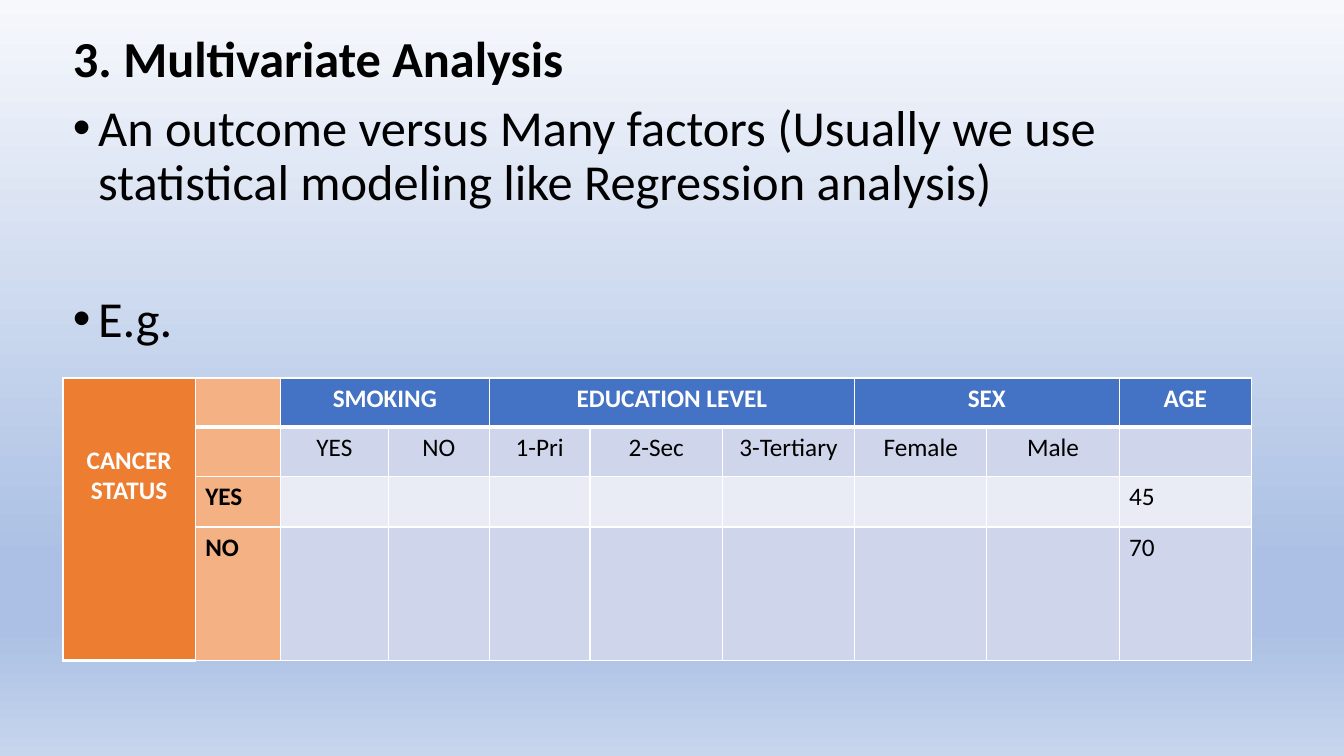
from lxml.etree import SubElement
from pptx import Presentation
from pptx.dml.color import RGBColor
from pptx.enum.text import PP_ALIGN
from pptx.oxml.ns import qn
from pptx.util import Emu, Pt

PX = 9525
COLORS = {
    "black": "000000", "white": "FFFFFF", "orange": "ED7D31", "peach": "F4B183",
    "blue": "4472C4", "band": "CFD5EA", "light": "E9EBF5",
}
BACKGROUND = [(0, "F6F8FC"), (74, "ABC0E4"), (83, "ABC0E4"), (100, "C7D5ED")]
COLUMNS = [126, 81, 103, 96, 96] + [126] * 5
HEIGHTS = [47, 47, 48, 127]
CELLS = [
    ["CANCER STATUS", "", "SMOKING", "", "EDUCATION LEVEL", "", "", "SEX", "", "AGE"],
    ["", "", "YES", "NO", "1-Pri", "2-Sec", "3-Tertiary", "Female", "Male", ""],
    ["", "YES", "", "", "", "", "", "", "", "45"],
    ["", "NO", "", "", "", "", "", "", "", "70"],
]
MERGES = [(0, 0, 3, 0), (0, 2, 0, 3), (0, 4, 0, 6), (0, 7, 0, 8)]
ROW_FILLS = ["blue", "band", "light", "band"]


def write(p, text, size=18, color="black", bold=False, align=PP_ALIGN.LEFT,
          before=0, spacing=1.0, bullet=False):
    p.alignment = align
    p.space_before = Pt(before)
    p.line_spacing = spacing
    if bullet:
        pPr = p._p.get_or_add_pPr()
        pPr.set("marL", str(24 * PX))
        pPr.set("indent", str(-24 * PX))
        SubElement(pPr, qn("a:buFont"), typeface="Arial")
        SubElement(pPr, qn("a:buChar"), char="•")
    r = p.add_run()
    r.text = text
    r.font.name = "Calibri"
    r.font.size = Pt(size)
    r.font.bold = bold
    r.font.color.rgb = RGBColor.from_string(COLORS[color])


class Deck:
    """Builds slides with one shared style."""

    def __init__(self, width, height):
        self.prs = Presentation()
        self.prs.slide_width = Emu(width * PX)
        self.prs.slide_height = Emu(height * PX)

    def slide(self, stops):
        self.s = self.prs.slides.add_slide(self.prs.slide_layouts[6])
        fill = self.s.background.fill
        fill.gradient()
        fill.gradient_angle = 270
        gs_list = self.s.element.find(".//" + qn("a:gsLst"))
        for gs in list(gs_list):
            gs_list.remove(gs)
        for percent, color in stops:
            gs = SubElement(gs_list, qn("a:gs"), pos=str(percent * 1000))
            SubElement(gs, qn("a:srgbClr"), val=color)

    def text(self, x, y, w, h, paragraphs):
        sp = self.s.shapes.add_textbox(*(Emu(v * PX) for v in (x, y, w, h)))
        tf = sp.text_frame
        tf.word_wrap = True
        for i, (text, style) in enumerate(paragraphs):
            p = tf.add_paragraph() if i else tf.paragraphs[0]
            write(p, text, size=36, spacing=0.9, **style)

    def borders(self, cell, top, bottom):
        tcPr = cell._tc.get_or_add_tcPr()
        for side, width in zip("LRTB", (1, 1, top, bottom)):
            ln = SubElement(tcPr, qn(f"a:ln{side}"), w=str(Pt(width)))
            solid = SubElement(ln, qn("a:solidFill"))
            SubElement(solid, qn("a:srgbClr"), val=COLORS["white"])

    def cell(self, cell, text, fill, top=1, bottom=1, **style):
        self.borders(cell, top, bottom)
        cell.fill.solid()
        cell.fill.fore_color.rgb = RGBColor.from_string(COLORS[fill])
        if text:
            write(cell.text_frame.paragraphs[0], text, **style)

    def table(self, x, y, columns, heights):
        box = (x, y, sum(columns), sum(heights))
        frame = self.s.shapes.add_table(len(heights), len(columns),
                                        *(Emu(v * PX) for v in box))
        table = frame.table
        table.first_row = table.horz_banding = False
        for column, width in zip(table.columns, columns):
            column.width = Emu(width * PX)
        for row, height in zip(table.rows, heights):
            row.height = Emu(height * PX)
        return table

    def save(self):
        self.prs.save("out.pptx")


def main():
    deck = Deck(1280, 720)
    deck.slide(BACKGROUND)
    deck.text(60, 28, 1132, 620, [
        ("3. Multivariate Analysis", dict(bold=True, before=10)),
        ("An outcome versus Many factors (Usually we use statistical modeling "
         "like Regression analysis)", dict(bullet=True, before=10)),
        ("E.g.", dict(bullet=True, before=59)),
    ])

    table = deck.table(60, 360, COLUMNS, HEIGHTS)
    for top, left, bottom, right in MERGES:
        table.cell(top, left).merge(table.cell(bottom, right))
    for i, row in enumerate(CELLS):
        for j, text in enumerate(row):
            header = i == 0 or j == 0
            deck.cell(
                table.cell(i, j), text,
                fill={0: "orange", 1: "peach"}.get(j, ROW_FILLS[i]),
                top=3 if i == 1 and j else 1,
                bottom=3 if i == 0 or (i == 3 and j == 0) else 1,
                color="white" if header else "black",
                bold=header or j == 1,
                align=PP_ALIGN.CENTER if i < 2 else PP_ALIGN.LEFT,
            )
    table.cell(0, 0).margin_top = Emu(64 * PX)
    deck.save()


if __name__ == "__main__":
    main()
